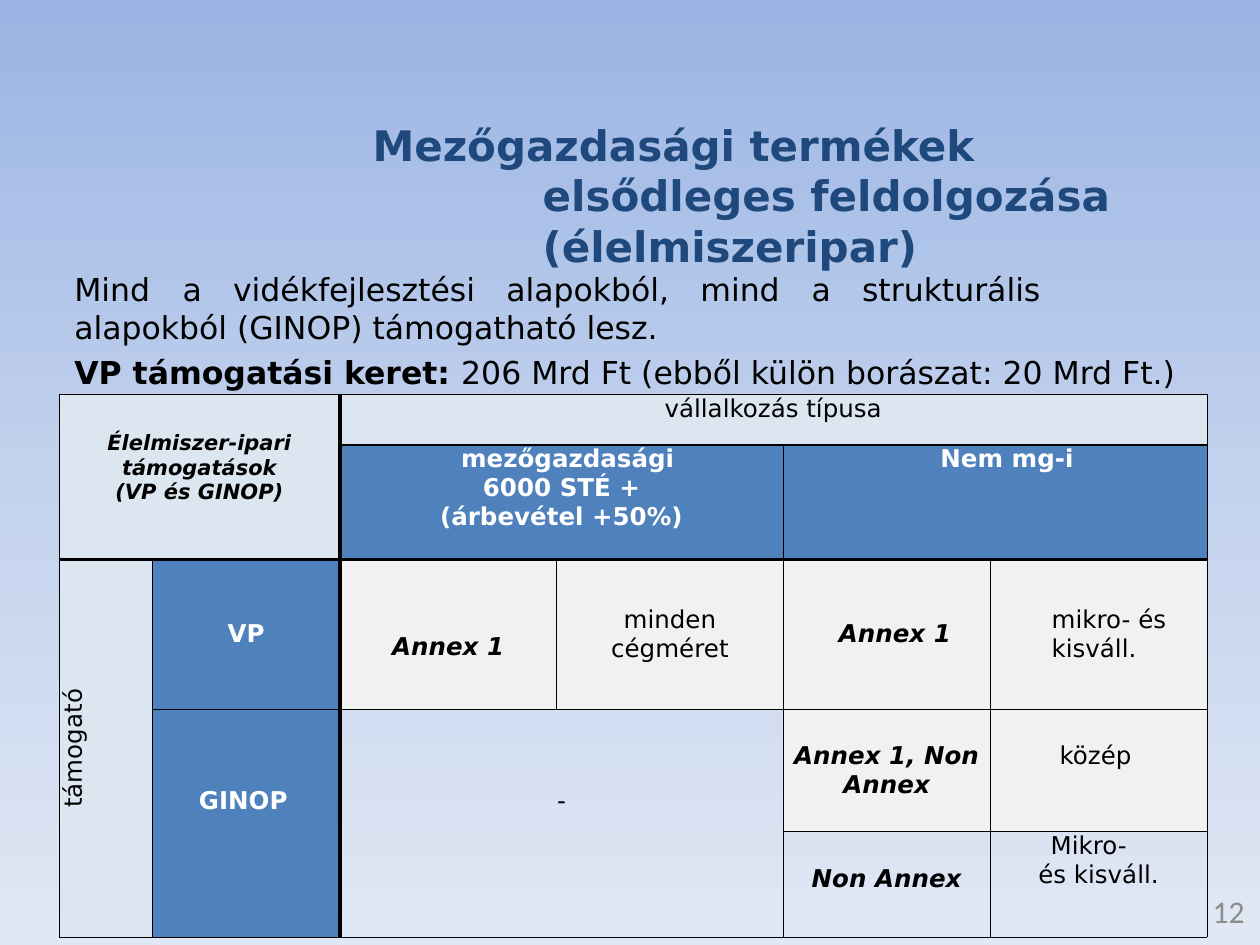
from copy import deepcopy
from dataclasses import dataclass

from lxml.etree import SubElement
from pptx import Presentation
from pptx.dml.color import RGBColor
from pptx.enum.text import MSO_ANCHOR, MSO_AUTO_SIZE, PP_ALIGN
from pptx.oxml.ns import qn
from pptx.util import Cm, Pt

FONT = "DejaVu Sans"
BLACK, WHITE = "000000", "FFFFFF"
PALE, BLUE, GREY = "DCE6F0", "4F81BC", "F1F1F1"
NO_STYLE = "{2D5ABB26-0587-4C30-8999-92F81FD0307C}"
COLUMNS = [1.88, 3.78, 4.37, 4.57, 4.17, 4.37]
ROWS = [1.02, 2.31, 3.02, 2.46, 2.13]
VERTICAL_LINES = [0.25, 1, 2.25, 0.5, 1, 0.5, 0.25]
HORIZONTAL_LINES = [0.25, 1, 2.25, 1, 0.5, 0.25]


@dataclass
class Entry:
    row: int
    column: int
    lines: list
    fill: str = ""
    rows: int = 1
    columns: int = 1
    size: int = 14
    bold: bool = False
    italic: bool = False
    align: PP_ALIGN = PP_ALIGN.CENTER
    middle: bool = False
    left: float = 0
    top: float = 0
    right: float = 0
    first: float = 0
    turned: bool = False


ENTRIES = [
    Entry(0, 0, ["Élelmiszer-ipari támogatások (VP és GINOP)"], PALE, 2, 2, 12,
          bold=True, italic=True, left=0.91, top=0.74, right=0.91),
    Entry(0, 2, ["vállalkozás típusa"], PALE, columns=4),
    Entry(1, 2, ["mezőgazdasági 6000 STÉ + (árbevétel +50%)"], BLUE, columns=2,
          bold=True, left=1.7, right=1.7, first=0.25),
    Entry(1, 4, ["Nem mg-i"], BLUE, columns=2, bold=True, left=1.83, right=1.83, first=0.48),
    Entry(2, 0, ["támogató"], PALE, rows=3, middle=True, turned=True),
    Entry(2, 1, ["VP"], BLUE, bold=True, middle=True),
    Entry(2, 2, ["Annex 1"], GREY, bold=True, italic=True, middle=True, top=0.5),
    Entry(2, 3, ["minden", "cégméret"], GREY, middle=True),
    Entry(2, 4, ["Annex 1"], GREY, bold=True, italic=True, align=PP_ALIGN.LEFT,
          middle=True, left=1.12),
    Entry(2, 5, ["mikro- és kisváll."], GREY, align=PP_ALIGN.LEFT, middle=True,
          left=1.24, first=-0.3),
    Entry(3, 1, ["GINOP"], BLUE, rows=2, bold=True, align=PP_ALIGN.LEFT, left=0.94, top=1.56),
    Entry(3, 2, ["-"], rows=2, columns=2, top=1.56),
    Entry(3, 4, ["Annex 1, Non Annex"], GREY, bold=True, italic=True, top=0.66),
    Entry(3, 5, ["közép"], GREY, align=PP_ALIGN.LEFT, left=1.4, top=0.66),
    Entry(4, 4, ["Non Annex"], bold=True, italic=True, top=0.66),
    Entry(4, 5, ["Mikro- és kisváll."], align=PP_ALIGN.LEFT, left=0.97, right=0.91, first=0.25),
]


def color(value):
    return RGBColor.from_string(value)


def add_run(paragraph, text, size, value=BLACK, bold=False, italic=False, font=FONT):
    run = paragraph.add_run()
    run.text = text
    run.font.name = font
    run.font.size = Pt(size)
    run.font.bold = bold
    run.font.italic = italic
    run.font.color.rgb = color(value)


def set_indent(paragraph, left, first):
    properties = paragraph._p.get_or_add_pPr()
    properties.set("marL", str(Cm(left)))
    properties.set("indent", str(Cm(first)))


def set_frame(frame, right=0):
    frame.margin_left = frame.margin_top = frame.margin_bottom = 0
    frame.margin_right = Cm(right)
    frame.word_wrap = True
    frame.auto_size = MSO_AUTO_SIZE.NONE
    frame.vertical_anchor = MSO_ANCHOR.TOP


def add_text_frame(slide, box):
    frame = slide.shapes.add_textbox(*map(Cm, box)).text_frame
    set_frame(frame)
    return frame


def paint_background(slide):
    fill = slide.background.fill
    fill.gradient()
    fill.gradient_angle = 270
    for stop, value in zip(fill.gradient_stops, ["9AB5E4", "E1E8F5"]):
        stop.color.rgb = color(value)
    stops = next(slide.element.iter(qn("a:gsLst")))
    middle = deepcopy(stops[0])
    middle.set("pos", "50000")
    middle[0].set("val", "C2D1ED")
    stops.insert(1, middle)


def place_title(slide, box):
    title = slide.shapes.title
    title.left, title.top, title.width, title.height = map(Cm, box)
    set_frame(title.text_frame, right=0.25)
    paragraph = title.text_frame.paragraphs[0]
    paragraph.alignment = PP_ALIGN.LEFT
    set_indent(paragraph, 3.45, -3.43)
    add_run(paragraph, "Mezőgazdasági termékek elsődleges feldolgozása (élelmiszeripar)",
            24, "1F487C", bold=True)


def place_introduction(slide, box):
    frame = add_text_frame(slide, box)
    funds = frame.paragraphs[0]
    tabs = SubElement(funds._p.get_or_add_pPr(), qn("a:tabLst"))
    for position in [2.18, 3.2, 8.71, 12.62, 14.86, 15.88, 20.12]:
        SubElement(tabs, qn("a:tab"), pos=str(Cm(position)), algn="l")
    add_run(funds, "Mind\ta\tvidékfejlesztési\talapokból,\tmind\ta\tstrukturális\t"
                   "alapokból (GINOP) támogatható lesz.", 18)
    budget = frame.add_paragraph()
    budget.space_before = Pt(4.3)
    add_run(budget, "VP támogatási keret: ", 18, bold=True)
    add_run(budget, "206 Mrd Ft (ebből külön borászat: 20 Mrd Ft.)", 18)


def draw_borders(table, entry):
    last_row, last_column = entry.row + entry.rows, entry.column + entry.columns
    for row in range(entry.row, last_row):
        for column in range(entry.column, last_column):
            origin = (row, column) == (entry.row, entry.column)
            edges = [
                ("a:lnL", VERTICAL_LINES[entry.column], column == entry.column),
                ("a:lnR", VERTICAL_LINES[last_column], column == last_column - 1),
                ("a:lnT", HORIZONTAL_LINES[entry.row], row == entry.row),
                ("a:lnB", HORIZONTAL_LINES[last_row], row == last_row - 1),
            ]
            properties = table.cell(row, column)._tc.get_or_add_tcPr()
            drawn = [(tag, width) for tag, width, outer in edges if origin or outer]
            for position, (tag, width) in enumerate(drawn):
                line = SubElement(properties, qn(tag), w=str(Pt(width)))
                fill = SubElement(line, qn("a:solidFill"))
                SubElement(fill, qn("a:srgbClr"), val=BLACK)
                properties.insert(position, line)


def fill_cell(table, entry):
    cell = table.cell(entry.row, entry.column)
    if entry.rows * entry.columns > 1:
        cell.merge(table.cell(entry.row + entry.rows - 1, entry.column + entry.columns - 1))
    cell.margin_left, cell.margin_right = Cm(entry.left), Cm(entry.right)
    cell.margin_top, cell.margin_bottom = Cm(entry.top), 0
    cell.vertical_anchor = MSO_ANCHOR.MIDDLE if entry.middle else MSO_ANCHOR.TOP
    if entry.fill:
        cell.fill.solid()
        cell.fill.fore_color.rgb = color(entry.fill)
    else:
        cell.fill.background()
    if entry.turned:
        cell._tc.get_or_add_tcPr().set("vert", "vert270")
    for index, text in enumerate(entry.lines):
        paragraph = cell.text_frame.add_paragraph() if index else cell.text_frame.paragraphs[0]
        paragraph.alignment = entry.align
        set_indent(paragraph, 0, entry.first)
        add_run(paragraph, text, entry.size, WHITE if entry.fill == BLUE else BLACK,
                entry.bold, entry.italic)
    draw_borders(table, entry)


def place_support_table(slide, left, top):
    box = [Cm(length) for length in (left, top, sum(COLUMNS), sum(ROWS))]
    table = slide.shapes.add_table(len(ROWS), len(COLUMNS), *box).table
    table.first_row = table.horz_banding = False
    next(table._tbl.iter(qn("a:tableStyleId"))).text = NO_STYLE
    for column, width in zip(table.columns, COLUMNS):
        column.width = Cm(width)
    for row, height in zip(table.rows, ROWS):
        row.height = Cm(height)
    for entry in ENTRIES:
        fill_cell(table, entry)


def place_page_number(slide, box):
    paragraph = add_text_frame(slide, box).paragraphs[0]
    paragraph.alignment = PP_ALIGN.RIGHT
    add_run(paragraph, "12", 18, "8C8C8C", font="Calibri")


def main():
    presentation = Presentation()
    presentation.slide_width, presentation.slide_height = Cm(25.4), Cm(19.05)
    slide = presentation.slides.add_slide(presentation.slide_layouts[5])
    paint_background(slide)
    place_title(slide, (7.49, 2.41, 17.45, 2.06))
    place_introduction(slide, (1.5, 5.44, 23.19, 2.44))
    place_support_table(slide, 1.19, 7.95)
    place_page_number(slide, (19.25, 17.98, 5.84, 0.76))
    presentation.save("out.pptx")


if __name__ == "__main__":
    main()
